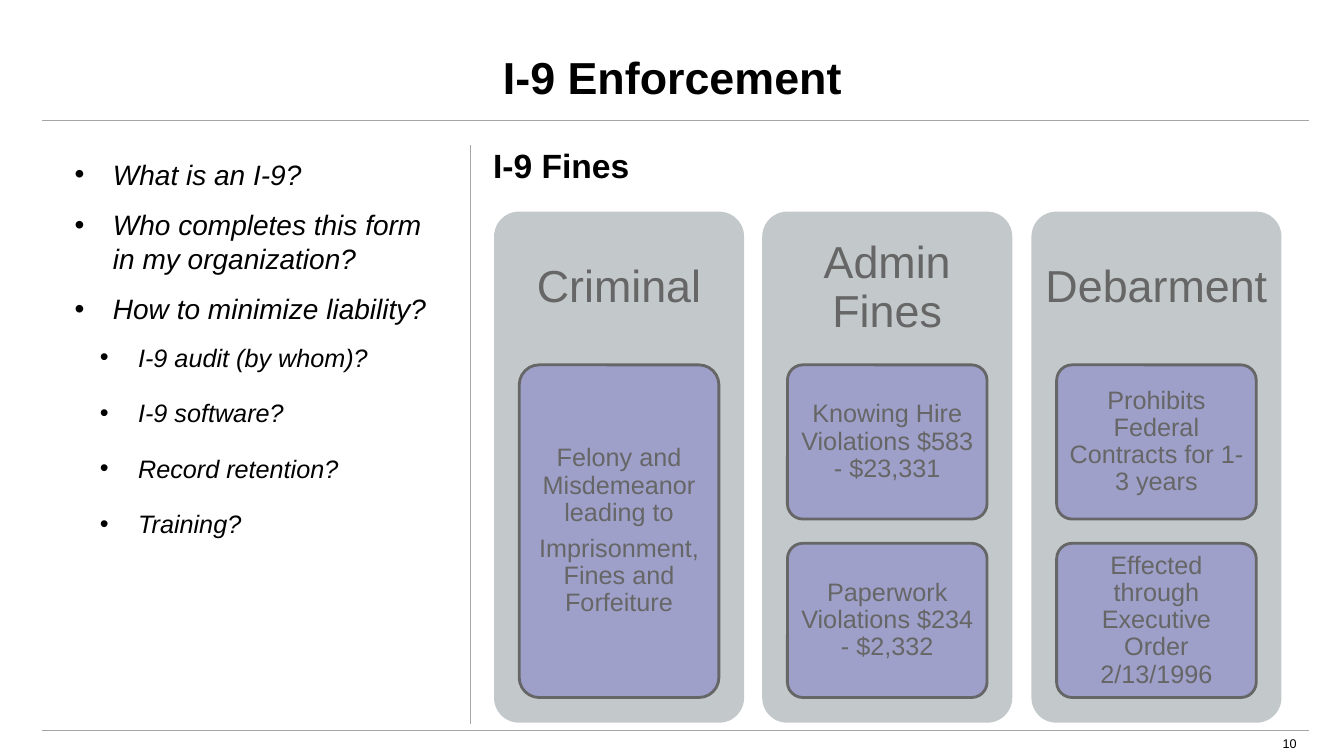
"""Build the I-9 Enforcement slide with its questions and three columns of fines."""
from dataclasses import dataclass

from lxml.etree import SubElement
from pptx import Presentation
from pptx.dml.color import RGBColor
from pptx.enum.shapes import MSO_CONNECTOR as Connector, MSO_SHAPE as Shape
from pptx.enum.text import MSO_ANCHOR as Anchor, PP_ALIGN as Align
from pptx.oxml.ns import qn
from pptx.util import Pt

PX = 9144


@dataclass(frozen=True)
class Theme:
    font: str = "Arial"
    ink: RGBColor = RGBColor.from_string("000000")
    rule: RGBColor = RGBColor.from_string("A6A6A6")
    panel: RGBColor = RGBColor.from_string("C3C8CA")
    card: RGBColor = RGBColor.from_string("9EA0CA")
    muted: RGBColor = RGBColor.from_string("666666")
    display: int = 32
    heading: int = 24
    body: int = 20
    detail: int = 18
    footer: int = 9


theme = Theme()


def write(frame, text, size, color=theme.ink, bold=False, italic=False, align=Align.LEFT,
          anchor=Anchor.TOP, inset=(0, 0), spacing=1.0, before=0, after=0, level=0, indent=0):
    """Add one paragraph to a text frame, filling the empty first one if there is one."""
    frame.word_wrap = True
    frame.vertical_anchor = anchor
    frame.margin_left = frame.margin_right = inset[0] * PX
    frame.margin_top = frame.margin_bottom = inset[1] * PX
    paragraph = frame.add_paragraph() if frame.text else frame.paragraphs[0]
    paragraph.alignment, paragraph.level = align, level
    paragraph.line_spacing = spacing
    paragraph.space_before, paragraph.space_after = Pt(before), Pt(after)
    if indent:
        properties = paragraph._p.get_or_add_pPr()
        properties.set("marL", str(indent * PX))
        properties.set("indent", str(-38 * PX))
        SubElement(properties, qn("a:buFont")).set("typeface", theme.font)
        SubElement(properties, qn("a:buChar")).set("char", "•")
    run = paragraph.add_run()
    run.text = text
    font = run.font
    font.name, font.size, font.bold, font.italic = theme.font, Pt(size), bold, italic
    font.color.rgb = color


def add_box(left, top, width, height, fill=None, outline=None):
    """Add a text box, or a rounded rectangle when a fill is given."""
    place = [length * PX for length in (left, top, width, height)]
    if fill is None:
        return slide.shapes.add_textbox(*place)
    shape = slide.shapes.add_shape(Shape.ROUNDED_RECTANGLE, *place)
    shape.shadow.inherit = False
    shape.adjustments[0] = 0.1
    shape.fill.solid()
    shape.fill.fore_color.rgb = fill
    if outline is None:
        shape.line.fill.background()
    else:
        shape.line.color.rgb = outline
        shape.line.width = Pt(2)
    return shape


presentation = Presentation()
presentation.slide_width, presentation.slide_height = 1333 * PX, 750 * PX
slide = presentation.slides.add_slide(presentation.slide_layouts[6])

for ends in [(42, 119, 1298, 119), (42, 725, 1298, 725), (467, 144, 467, 718)]:
    rule = slide.shapes.add_connector(Connector.STRAIGHT, *[length * PX for length in ends])
    rule.line.color.rgb = theme.rule
    rule.line.width = Pt(0.5)
    SubElement(rule._element.spPr, qn("a:effectLst"))

write(add_box(67, 55, 1200, 48).text_frame, "I-9 Enforcement", theme.display, bold=True,
      align=Align.CENTER, anchor=Anchor.BOTTOM, spacing=0.9)
write(add_box(489, 144, 726, 40).text_frame, "I-9 Fines", theme.heading, bold=True,
      anchor=Anchor.MIDDLE)
write(add_box(1258, 730, 28, 15).text_frame, "10", theme.footer, align=Align.RIGHT,
      anchor=Anchor.MIDDLE)

questions = add_box(74, 156, 362, 540).text_frame
for text in ["What is an I-9?", "Who completes this form in my organization?",
             "How to minimize liability?"]:
    write(questions, text, theme.body, italic=True, before=12, indent=38)
for text in ["I-9 audit (by whom)?", "I-9 software?", "Record retention?", "Training?"]:
    write(questions, text, theme.detail, italic=True, before=12, after=6, level=1, indent=63)

columns = [
    ("Criminal", [["Felony and Misdemeanor leading to", "Imprisonment, Fines and Forfeiture"]]),
    ("Admin Fines", [["Knowing Hire Violations $583 - $23,331"],
                     ["Paperwork Violations $234 - $2,332"]]),
    ("Debarment", [["Prohibits Federal Contracts for 1-3 years"],
                   ["Effected through Executive Order 2/13/1996"]]),
]
CARDS_TOP, CARDS_HEIGHT, CARD_GAP = 362, 330, 24
centered = dict(color=theme.muted, align=Align.CENTER, anchor=Anchor.MIDDLE, spacing=0.9)

for index, (name, cards) in enumerate(columns):
    left = 490 + index * 533 // 2
    add_box(left, 210, 248, 507, theme.panel)
    write(add_box(left, 210, 248, 152).text_frame, name, theme.display, inset=(13, 13), **centered)
    height = (CARDS_HEIGHT - CARD_GAP * (len(cards) - 1)) // len(cards)
    for row, lines in enumerate(cards):
        top = CARDS_TOP + row * (height + CARD_GAP)
        card = add_box(left + 25, top, 198, height, theme.card, theme.muted)
        for line in lines:
            write(card.text_frame, line, theme.detail, inset=(5, 4), after=6.3, **centered)

presentation.save("out.pptx")
